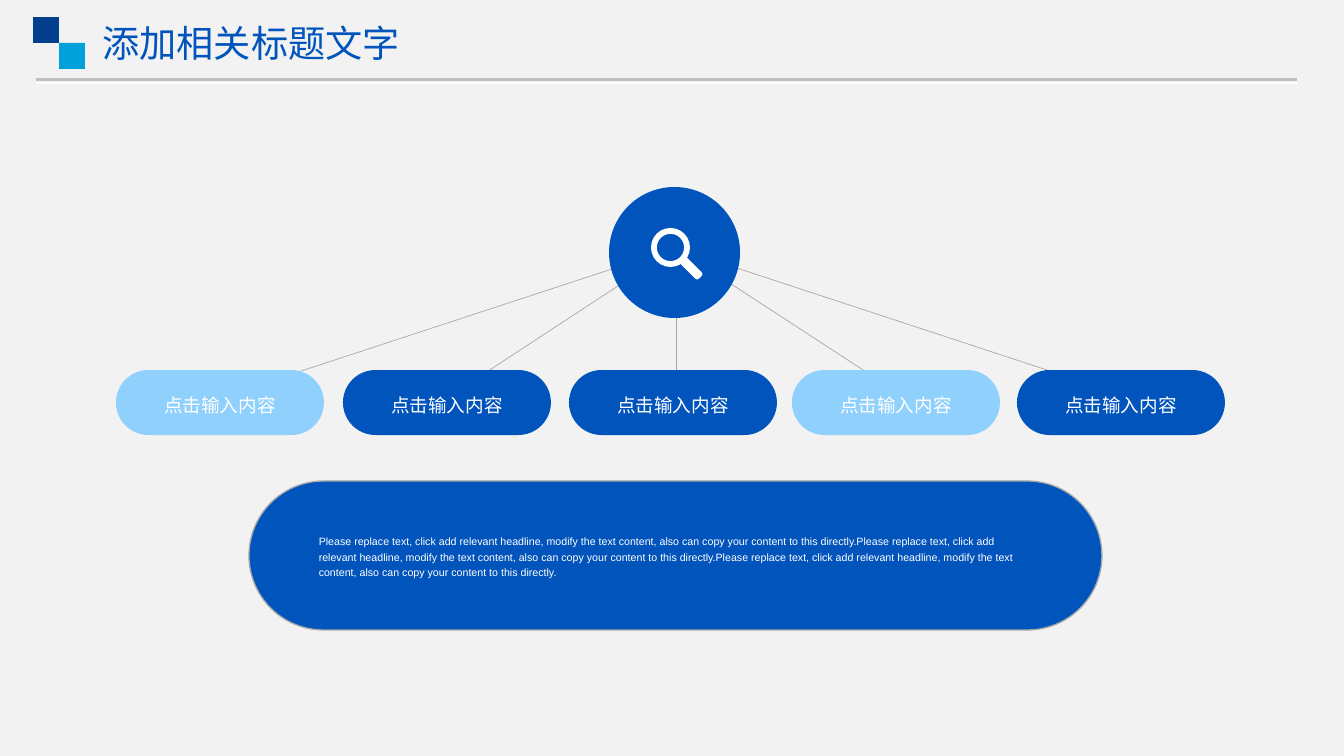
import pptx
import pptx.dml.color
import pptx.enum.shapes
import pptx.enum.text
import pptx.oxml
import pptx.oxml.ns
import pptx.util

PX = 9565  # EMU per px
SHAPE = pptx.enum.shapes.MSO_SHAPE
ALIGN = pptx.enum.text.PP_ALIGN
MIDDLE = pptx.enum.text.MSO_ANCHOR.MIDDLE

THEME = {
    "background": "F2F2F2", "blue": "0154BC", "sky": "90D0FD",
    "navy": "013F8D", "cyan": "00A1DA", "white": "FFFFFF",
    "rule": "BFBFBF", "spoke": "A6A6A6", "outline": "A6AAA9",
    "title_font": "Noto Sans CJK SC", "body_font": "Arial",
    "title_size": 28, "label_size": 14, "body_size": 8,
}


def color(name):
    return pptx.dml.color.RGBColor.from_string(THEME[name])


def add_line(x1, y1, x2, y2, line_color, width):
    line = s.shapes.add_connector(
        pptx.enum.shapes.MSO_CONNECTOR.STRAIGHT, x1 * PX, y1 * PX, x2 * PX, y2 * PX)
    line.line.color.rgb = color(line_color)
    line.line.width = pptx.util.Pt(width)
    line._element.spPr.append(
        pptx.oxml.parse_xml("<a:effectLst %s/>" % pptx.oxml.ns.nsdecls("a")))


def add_block(kind, x, y, w, h, fill, text="", size="label_size", align=ALIGN.CENTER):
    sp = s.shapes.add_shape(kind, x * PX, y * PX, w * PX, h * PX)
    sp.shadow.inherit = False
    sp.fill.solid()
    sp.fill.fore_color.rgb = color(fill)
    sp.line.fill.background()
    if kind == SHAPE.ROUNDED_RECTANGLE:
        sp.adjustments[0] = 0.5
    if text:
        tf = sp.text_frame
        tf.word_wrap = True
        tf.vertical_anchor = MIDDLE
        tf.margin_left = tf.margin_right = tf.margin_top = tf.margin_bottom = 0
        p = tf.paragraphs[0]
        p.text = text
        p.alignment = align
        p.line_spacing = 1.2
        p.space_before = pptx.util.Pt(10)
        p.font.name = THEME["body_font"]
        p.font.size = pptx.util.Pt(THEME[size])
        p.font.color.rgb = color("white")
    return sp


prs = pptx.Presentation()
prs.slide_width, prs.slide_height = 1344 * PX, 756 * PX
s = prs.slides.add_slide(prs.slide_layouts[5])
s.background.fill.solid()
s.background.fill.fore_color.rgb = color("background")

# Header: rule with its white lower edge, two squares, title
add_line(36, 83, 1297, 83, "white", 2.25)
add_line(36, 80, 1297, 80, "rule", 2.25)
add_block(SHAPE.RECTANGLE, 33, 17, 26, 26, "navy")
add_block(SHAPE.RECTANGLE, 59, 43, 26, 26, "cyan")

title = s.shapes.title
title.left, title.top, title.width, title.height = 93 * PX, 16 * PX, 346 * PX, 54 * PX
title.text_frame.vertical_anchor = MIDDLE
title.text_frame.auto_size = pptx.enum.text.MSO_AUTO_SIZE.NONE
p = title.text_frame.paragraphs[0]
p.text = "添加相关标题文字"
p.alignment = ALIGN.LEFT
p.font.name = THEME["title_font"]
p.font.size = pptx.util.Pt(THEME["title_size"])
p.font.color.rgb = color("blue")

# Spokes from the hub, then the labels that cover their ends
for spoke_x in (219, 447, 676, 906, 1132):
    add_line(676, 248, spoke_x, 398, "spoke", 0.5)

for x, fill in ((116, "sky"), (343, "blue"), (569, "blue"), (792, "sky"), (1017, "blue")):
    add_block(SHAPE.ROUNDED_RECTANGLE, x, 370, 208, 65, fill, "点击输入内容")

# Hub with magnifier
add_block(SHAPE.OVAL, 609, 187, 131, 131, "blue")
lens = add_block(SHAPE.DONUT, 651, 228, 39, 39, "white")
lens.adjustments[0] = 0.15
handle = add_block(SHAPE.ROUNDED_RECTANGLE, 679, 264, 25, 9, "white")
handle.adjustments[0] = 0.3
handle.rotation = 45

# Description panel
sentence = ("Please replace text, click add relevant headline, modify the text content, "
            "also can copy your content to this directly.")
panel = add_block(SHAPE.ROUNDED_RECTANGLE, 249, 481, 853, 149, "blue",
                  sentence * 3, "body_size", ALIGN.LEFT)
panel.line.color.rgb = color("outline")
panel.line.width = pptx.util.Pt(1)
panel.text_frame.margin_left = 48 * PX
panel.text_frame.margin_right = 56 * PX

prs.save("out.pptx")
